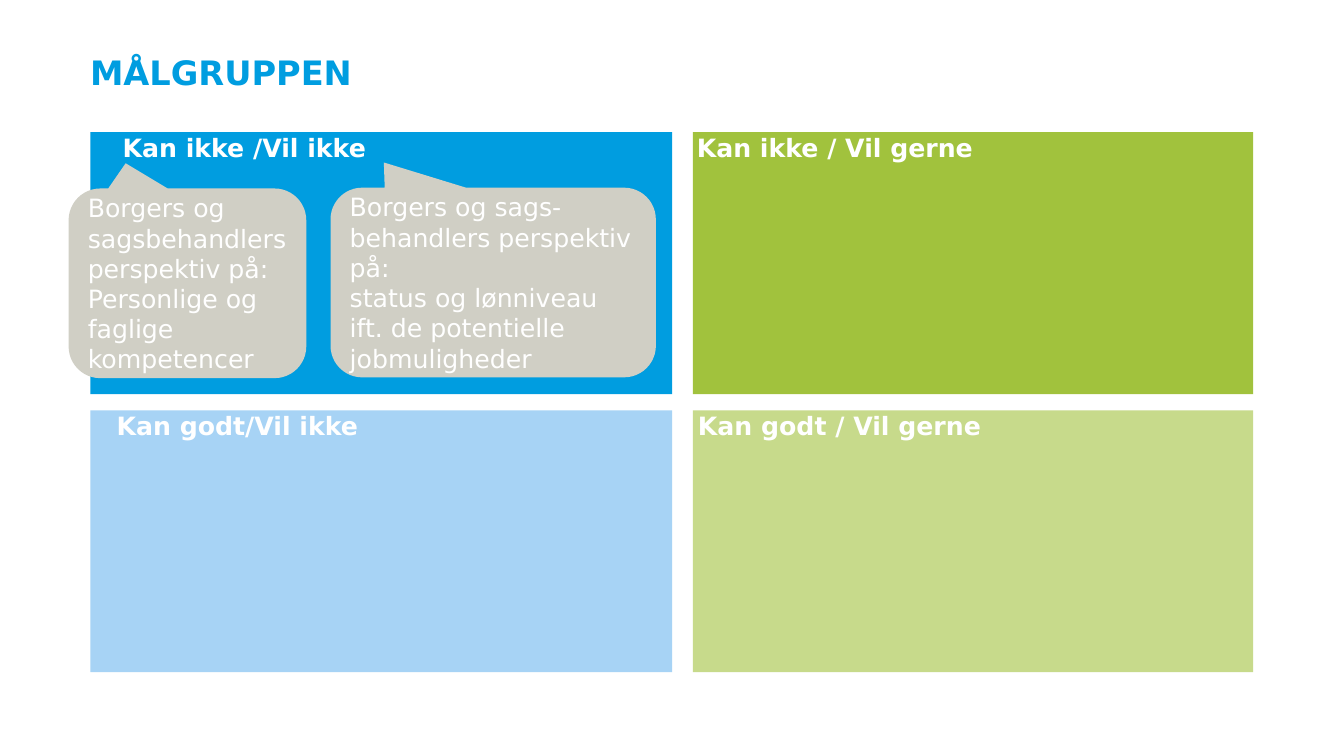
from pptx import Presentation
from pptx.dml.color import RGBColor
from pptx.enum import shapes, text
from pptx.util import Cm, Pt

FONT = "DejaVu Sans"
COLOURS = {
    "blue": "009DE0",
    "green": "A1C23D",
    "light blue": "A7D3F5",
    "light green": "C7DA8B",
    "grey": "D0CFC5",
    "white": "FFFFFF",
}
TOP, HEIGHT, ROW_STEP = 3.33, 6.6, 7.01
COLUMNS = [(2.28, 14.66), (17.46, 14.12)]  # left, width

# heading, colour, left inset, heading indent; row by row
QUADRANTS = [
    ("Kan ikke /Vil ikke", "blue", 0.1, 0.71),
    ("Kan ikke / Vil gerne", "green", 0.1, 0),
    ("Kan godt/Vil ikke", "light blue", 0.13, 0.53),
    ("Kan godt / Vil gerne", "light green", 0.13, 0),
]
# left, top, width, pointer position, paragraphs
CALLOUTS = [
    (1.73, 4.75, 5.99, -0.26,
     ["Borgers og sagsbehandlers perspektiv på:",
      "Personlige og faglige kompetencer"]),
    (8.33, 4.73, 8.2, -0.336,
     ["Borgers og sags-\vbehandlers perspektiv på:",
      "status og lønniveau ift. de potentielle jobmuligheder"]),
]


def colour(name):
    return RGBColor.from_string(COLOURS[name])


def place(shape, left, top, width, height):
    shape.left, shape.top = Cm(left), Cm(top)
    shape.width, shape.height = Cm(width), Cm(height)


def paint(shape, name):
    shape.fill.solid()
    shape.fill.fore_color.rgb = colour(name)
    shape.line.fill.background()


def set_frame(shape, anchor, insets=None):
    """Wrap the text, anchor it and optionally set left, top, right, bottom insets."""
    frame = shape.text_frame
    frame.word_wrap = True
    frame.auto_size = text.MSO_AUTO_SIZE.NONE
    frame.vertical_anchor = anchor
    if insets:
        (frame.margin_left, frame.margin_top,
         frame.margin_right, frame.margin_bottom) = map(Cm, insets)
    return frame


def style(paragraph, size, name, bold=False):
    paragraph.alignment = text.PP_ALIGN.LEFT
    paragraph.space_before = Pt(0)
    paragraph.font.name = FONT
    paragraph.font.size = Pt(size)
    paragraph.font.bold = bold
    paragraph.font.color.rgb = colour(name)


def add_title(slide, wording):
    title = slide.shapes.title
    place(title, 2.27, 1.25, 29.34, 2.08)
    frame = set_frame(title, text.MSO_ANCHOR.TOP, (0, 0.05, 0, 0))
    frame.text = wording
    style(frame.paragraphs[0], 24, "blue", bold=True)


def fill_quadrant(shape, heading, fill, inset, indent):
    paint(shape, fill)
    frame = set_frame(shape, text.MSO_ANCHOR.TOP, (inset, 0, 0, 0))
    frame.text = heading
    paragraph = frame.paragraphs[0]
    properties = paragraph._p.get_or_add_pPr()
    properties.set("marL", str(Cm(indent)))
    properties.set("indent", "0")
    properties.insert_element_before(
        properties.makeelement(
            "{http://schemas.openxmlformats.org/drawingml/2006/main}buNone"),
        "a:tabLst", "a:defRPr", "a:extLst")
    style(paragraph, 18, "white", bold=True)
    paragraph.line_spacing = Pt(21.6)
    paragraph.space_after = Pt(12)


def add_rectangle(slide):
    shape = slide.shapes.add_shape(shapes.MSO_SHAPE.RECTANGLE, 0, 0, 0, 0)
    shape.shadow.inherit = False
    return shape


def add_quadrants(slide):
    bodies = [shape for shape in slide.placeholders
              if shape.placeholder_format.idx > 0]
    for index, quadrant in enumerate(QUADRANTS):
        row, column = divmod(index, len(COLUMNS))
        left, width = COLUMNS[column]
        shape = bodies[index] if row == 0 else add_rectangle(slide)
        place(shape, left, TOP + row * ROW_STEP, width, HEIGHT)
        fill_quadrant(shape, *quadrant)


def add_callout(slide, left, top, width, pointer, lines):
    callout = slide.shapes.add_shape(
        shapes.MSO_SHAPE.ROUNDED_RECTANGULAR_CALLOUT,
        Cm(left), Cm(top), Cm(width), Cm(4.78))
    callout.shadow.inherit = False
    paint(callout, "grey")
    for index, value in enumerate((pointer, -0.633, 0.167)):
        callout.adjustments[index] = value
    frame = set_frame(callout, text.MSO_ANCHOR.MIDDLE)
    frame.text = "\n".join(lines)
    for paragraph in frame.paragraphs:
        style(paragraph, 18, "white")
        paragraph.line_spacing = Pt(21.6)


def main():
    presentation = Presentation()
    presentation.slide_width, presentation.slide_height = Cm(33.87), Cm(19.05)
    two_content = presentation.slide_layouts.get_by_name("Two Content")
    slide = presentation.slides.add_slide(two_content)
    add_title(slide, "MÅLGRUPPEN")
    add_quadrants(slide)
    for callout in CALLOUTS:
        add_callout(slide, *callout)
    presentation.save("out.pptx")


if __name__ == "__main__":
    main()
